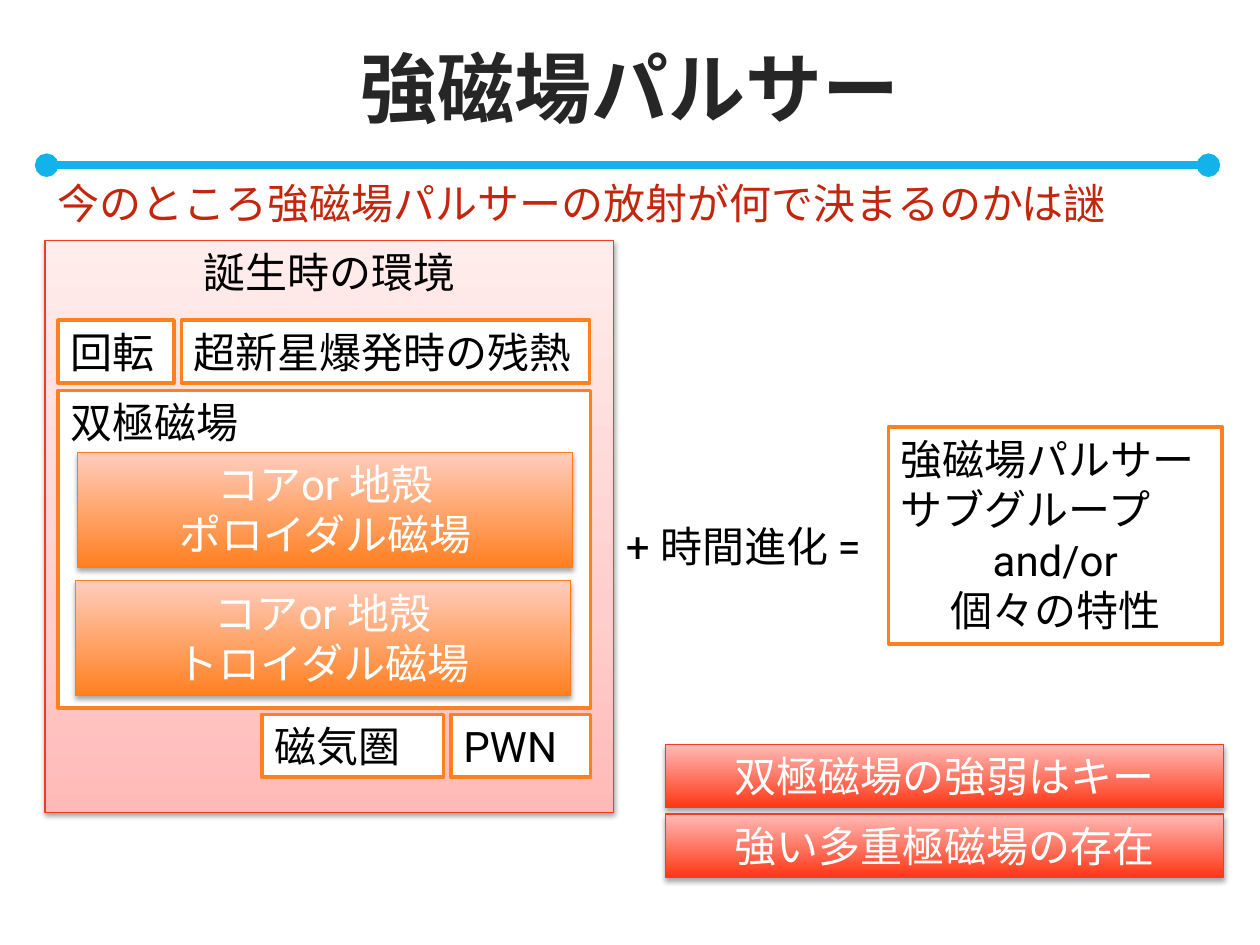
import copy
from dataclasses import dataclass

import pptx
import pptx.dml.color
import pptx.enum.shapes
import pptx.enum.text
import pptx.oxml
import pptx.oxml.ns
import pptx.util
from pptx.dml.color import RGBColor
from pptx.util import Cm

FONT = "Roboto"
BLACK = RGBColor(0x00, 0x00, 0x00)
WHITE = RGBColor(0xFF, 0xFF, 0xFF)
DARK = RGBColor(0x26, 0x26, 0x26)
BLUE = RGBColor(0x12, 0xB2, 0xEB)
BRICK = RGBColor(0xC3, 0x26, 0x0C)
RED = RGBColor(0xFF, 0x37, 0x16)
EDGE = RGBColor(0xF1, 0x3C, 0x1E)
ROSE = RGBColor(0xFF, 0xBA, 0xB7)
BLUSH = RGBColor(0xFF, 0xCE, 0xCC)
PALE = RGBColor(0xFF, 0xED, 0xEC)
ORANGE = RGBColor(0xFF, 0x80, 0x21)
AMBER = RGBColor(0xFF, 0x7C, 0x1B)
PEACH = RGBColor(0xFF, 0xCD, 0xBD)

LEFT = pptx.enum.text.PP_ALIGN.LEFT
MID = pptx.enum.text.PP_ALIGN.CENTER
TOP = pptx.enum.text.MSO_ANCHOR.TOP


@dataclass(frozen=True)
class Look:
    stops: tuple[tuple[float, RGBColor], ...]
    edge: RGBColor
    width: float
    ink: RGBColor
    align: int
    shade: tuple[int, float] | None = None


@dataclass(frozen=True)
class Box:
    x: float
    y: float
    w: float
    h: float
    look: Look
    lines: tuple[str, ...]
    mid: tuple[int, ...] = ()


PLAIN = Look(((0, WHITE),), ORANGE, 2, BLACK, LEFT)
FRAME = Look(((0, ROSE), (0.35, BLUSH), (1, PALE)), EDGE, 0.75, BLACK, MID, (38, 1.6))
FIELD = Look(((0, ORANGE), (1, PEACH)), AMBER, 0.75, WHITE, MID, (35, 1.8))
KEY = Look(((0, RED), (1, ROSE)), EDGE, 0.75, WHITE, MID, (35, 1.8))

ROW = 1.27
BOXES = (
    Box(0.91, 4.85, 11.46, 11.53, FRAME, ("誕生時の環境",)),
    Box(1.17, 7.87, 10.74, 6.4, PLAIN, ("双極磁場",)),
    Box(1.57, 9.12, 9.98, 2.31, FIELD, ("コアor 地殻", "ポロイダル磁場")),
    Box(1.52, 11.71, 9.98, 2.31, FIELD, ("コアor 地殻", "トロイダル磁場")),
    Box(1.17, 6.45, 2.34, ROW, PLAIN, ("回転",)),
    Box(5.28, 14.4, 3.66, ROW, PLAIN, ("磁気圏",)),
    Box(3.66, 6.45, 8.23, ROW, PLAIN, ("超新星爆発時の残熱",)),
    Box(17.91, 8.61, 6.73, 4.37, PLAIN,
        ("強磁場パルサー", "サブグループ", "and/or", "個々の特性"), (2, 3)),
    Box(9.09, 14.4, 2.82, ROW, PLAIN, ("PWN",)),
    Box(13.41, 15.01, 11.25, ROW, KEY, ("双極磁場の強弱はキー",)),
    Box(13.41, 16.41, 11.25, ROW, KEY, ("強い多重極磁場の存在",)),
)


def style(para, size: float, ink: RGBColor, align: int, bold: bool = False) -> None:
    para.alignment = align
    para.font.name = FONT
    para.font.size = pptx.util.Pt(size)
    para.font.bold = bold
    para.font.color.rgb = ink


def write(frame, lines: tuple[str, ...], ink: RGBColor, align: int,
          mid: tuple[int, ...] = ()) -> None:
    frame.word_wrap = True
    frame.vertical_anchor = TOP
    frame.text = "\n".join(lines)
    for i, para in enumerate(frame.paragraphs):
        style(para, 24, ink, MID if i in mid else align)


def paint(fill, stops: tuple[tuple[float, RGBColor], ...]) -> None:
    if len(stops) == 1:
        fill.solid()
        fill.fore_color.rgb = stops[0][1]
        return
    fill.gradient()
    fill.gradient_angle = 90
    first = fill.gradient_stops[0]._gs
    for _ in stops[2:]:
        first.addnext(copy.deepcopy(first))
    for stop, (spot, tone) in zip(fill.gradient_stops, stops):
        stop.position = spot
        stop.color.rgb = tone


def cast(shape, alpha: int, dist: float) -> None:
    space = pptx.oxml.ns.nsdecls("a")
    shade = pptx.oxml.parse_xml(
        f'<a:outerShdw {space} blurRad="{pptx.util.Pt(3.1)}" '
        f'dist="{pptx.util.Pt(dist)}" dir="5400000" rotWithShape="0">'
        f'<a:srgbClr val="{BLACK}"><a:alpha val="{alpha * 1000}"/></a:srgbClr>'
        '</a:outerShdw>')
    shape._element.spPr.find(pptx.oxml.ns.qn("a:effectLst")).append(shade)


def draw(slide, box: Box) -> None:
    look = box.look
    shape = slide.shapes.add_shape(
        pptx.enum.shapes.MSO_SHAPE.RECTANGLE,
        Cm(box.x), Cm(box.y), Cm(box.w), Cm(box.h))
    shape.shadow.inherit = False
    paint(shape.fill, look.stops)
    shape.line.color.rgb = look.edge
    shape.line.width = pptx.util.Pt(look.width)
    if look.shade:
        cast(shape, *look.shade)
    write(shape.text_frame, box.lines, look.ink, look.align, box.mid)


def note(slide, x: float, y: float, w: float, text: str, ink: RGBColor) -> None:
    area = slide.shapes.add_textbox(Cm(x), Cm(y), Cm(w), Cm(ROW))
    write(area.text_frame, (text,), ink, LEFT)


def head(slide) -> None:
    title = slide.shapes.title
    title.left, title.top = Cm(1.27), Cm(0.46)
    title.width, title.height = Cm(22.86), Cm(2.57)
    title.text_frame.text = "強磁場パルサー"
    title.text_frame.vertical_anchor = pptx.enum.text.MSO_ANCHOR.MIDDLE
    style(title.text_frame.paragraphs[0], 44, DARK, MID, True)


def rule(slide) -> None:
    line = slide.shapes.add_connector(
        pptx.enum.shapes.MSO_CONNECTOR.STRAIGHT,
        Cm(0.94), Cm(3.33), Cm(24.36), Cm(3.33))
    line.line.color.rgb = BLUE
    line.line.width = pptx.util.Pt(4.5)
    space = pptx.oxml.ns.nsdecls("a")
    for end in ("headEnd", "tailEnd"):
        line.line._get_or_add_ln().append(
            pptx.oxml.parse_xml(f'<a:{end} {space} type="oval"/>'))
    line._element.spPr.append(pptx.oxml.parse_xml(f"<a:effectLst {space}/>"))


def main() -> None:
    deck = pptx.Presentation()
    deck.slide_width, deck.slide_height = Cm(25.4), Cm(19.05)
    slide = deck.slides.add_slide(deck.slide_layouts[5])
    head(slide)
    rule(slide)
    for box in BOXES:
        draw(slide, box)
    note(slide, 12.37, 10.36, 5.4, "+ 時間進化 =", BLACK)
    note(slide, 0.91, 3.45, 24.74, "今のところ強磁場パルサーの放射が何で決まるのかは謎", BRICK)
    deck.save("out.pptx")


if __name__ == "__main__":
    main()
